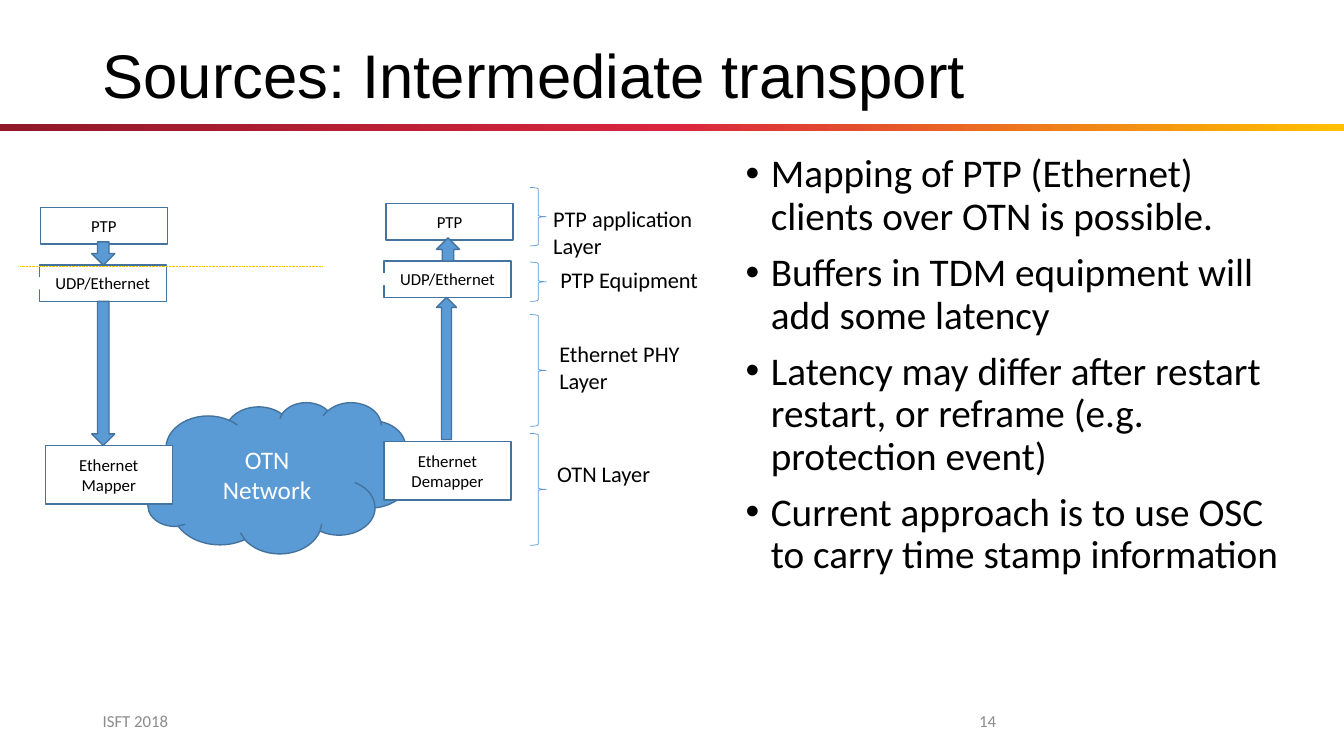
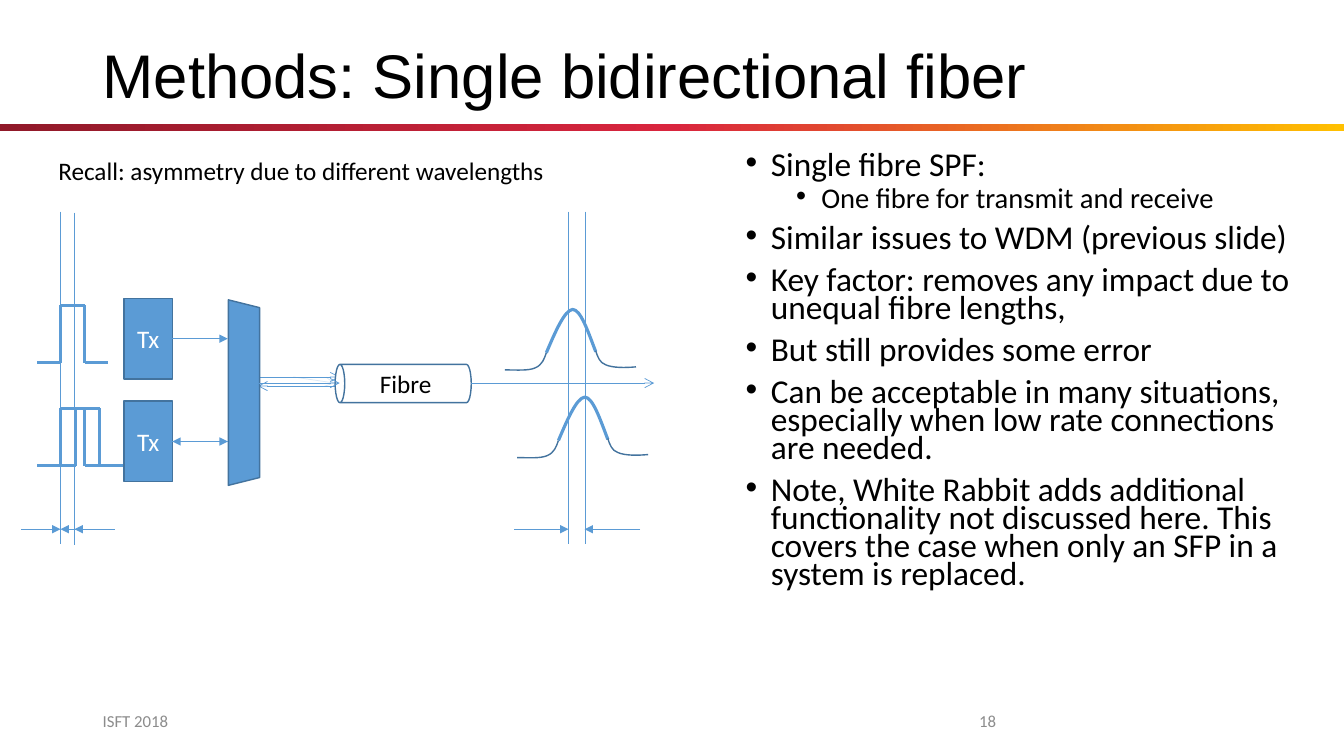
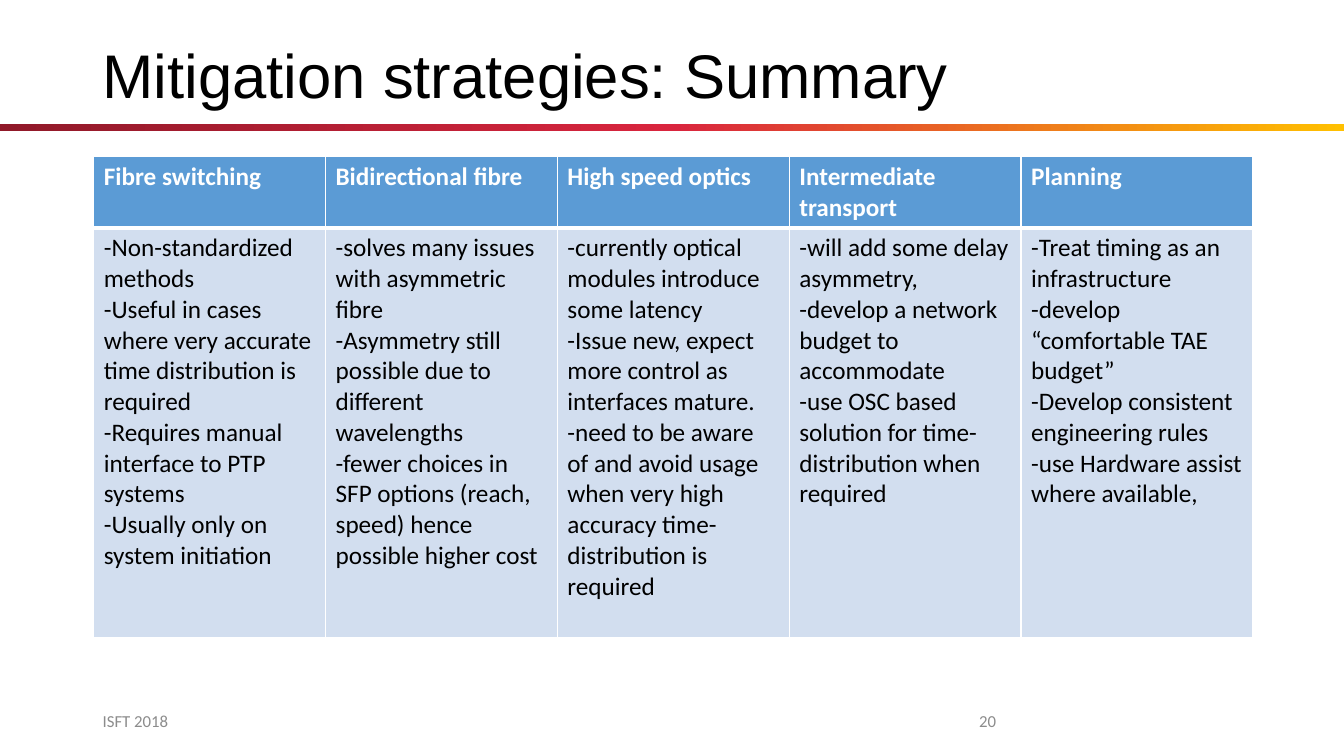
from dataclasses import dataclass
from itertools import pairwise
from typing import Optional

from lxml import etree
from pptx import Presentation
from pptx.dml.color import RGBColor
from pptx.enum.dml import MSO_LINE
from pptx.enum.shapes import MSO_CONNECTOR, MSO_SHAPE
from pptx.enum.text import MSO_ANCHOR, MSO_AUTO_SIZE, PP_ALIGN
from pptx.oxml import parse_xml
from pptx.oxml.ns import nsdecls, qn
from pptx.util import Inches, Pt

# Enum members
RECT, CLOUD, CAN = MSO_SHAPE.RECTANGLE, MSO_SHAPE.CLOUD, MSO_SHAPE.CAN
TRAPEZOID, BRACE = MSO_SHAPE.TRAPEZOID, MSO_SHAPE.RIGHT_BRACE
DOWN, UP = MSO_SHAPE.DOWN_ARROW, MSO_SHAPE.UP_ARROW
STRAIGHT, DOTTED = MSO_CONNECTOR.STRAIGHT, MSO_LINE.ROUND_DOT
LEFT, CENTER, RIGHT = PP_ALIGN.LEFT, PP_ALIGN.CENTER, PP_ALIGN.RIGHT
TOP, MIDDLE = MSO_ANCHOR.TOP, MSO_ANCHOR.MIDDLE
GROW = MSO_AUTO_SIZE.SHAPE_TO_FIT_TEXT

# Slide size, colours and fonts
SLIDE_H = 7.5
SLIDE_W = SLIDE_H * 16 / 9
BLACK = RGBColor(0x00, 0x00, 0x00)
WHITE = RGBColor(0xFF, 0xFF, 0xFF)
BLUE = RGBColor(0x5B, 0x9B, 0xD5)
EDGE = RGBColor(0x43, 0x73, 0x9E)
FAINT_BLUE = RGBColor(0x56, 0x98, 0xD3)
PALE_BLUE = RGBColor(0xD2, 0xDE, 0xEF)
GREY = RGBColor(0x8C, 0x8C, 0x8C)
GOLD = RGBColor(0xFF, 0xC0, 0x00)
RED = RGBColor(0xD9, 0x25, 0x3E)
DARK_RED = RGBColor(0x90, 0x19, 0x29)
TITLE_FONT, BODY_FONT = "Arial", "Calibri"


@dataclass
class Box:
    x: float
    y: float
    w: float
    h: float
    text: tuple = ()
    kind: MSO_SHAPE = RECT
    fill: Optional[RGBColor] = None
    line: Optional[RGBColor] = EDGE
    weight: float = 1
    size: float = 12
    color: RGBColor = BLACK
    rotation: float = 0


@dataclass
class Line:
    x1: float
    y1: float
    x2: float
    y2: float
    tail: str = ""
    weight: float = 0.5
    color: RGBColor = BLUE


@dataclass
class Bullet:
    text: str
    level: int = 0


# Text helpers
def add_run(p, text: str, size: float, color: RGBColor, font: str = BODY_FONT, bold: bool = False):
    r = p.add_run()
    r.text = text
    r.font.size = Pt(size)
    r.font.name = font
    r.font.bold = bold
    r.font.color.rgb = color


def write(tf, lines, size: float, color: RGBColor, align=LEFT, font: str = BODY_FONT,
          bold: bool = False, spacing: Optional[float] = None):
    for i, text in enumerate(lines):
        p = tf.add_paragraph() if i else tf.paragraphs[0]
        p.alignment = align
        if spacing:
            p.line_spacing = spacing
        add_run(p, text, size, color, font, bold)


def add_text(s, x: float, y: float, w: float, h: float, anchor=TOP):
    tf = s.shapes.add_textbox(Inches(x), Inches(y), Inches(w), Inches(h)).text_frame
    tf.word_wrap = True
    tf.vertical_anchor = anchor
    return tf


def add_label(s, x: float, y: float, w: float, h: float, lines, size: float):
    tf = add_text(s, x, y, w, h)
    tf.word_wrap = False
    tf.auto_size = GROW
    write(tf, lines, size, BLACK)


def add_bullets(s, bullets, sizes, spacing: float):
    tf = add_text(s, 7.3, 1.48, 5.67, 4.76)
    for i, b in enumerate(bullets):
        p = tf.add_paragraph() if i else tf.paragraphs[0]
        pPr = p._p.get_or_add_pPr()
        pPr.set("marL", str(Inches(0.25 + 0.5 * b.level)))
        pPr.set("indent", str(-Inches(0.25)))
        etree.SubElement(pPr, qn("a:buFont")).set("typeface", "Arial")
        etree.SubElement(pPr, qn("a:buChar")).set("char", "•")
        p.level = b.level
        p.line_spacing = spacing
        if i:
            p.space_before = Pt(5 if b.level else 10)
        add_run(p, b.text, sizes[b.level], BLACK)


# Shape helpers
def add_box(s, b: Box):
    sp = s.shapes.add_shape(b.kind, Inches(b.x), Inches(b.y), Inches(b.w), Inches(b.h))
    sp.shadow.inherit = False
    sp.rotation = b.rotation
    if b.fill is None:
        sp.fill.background()
    else:
        sp.fill.solid()
        sp.fill.fore_color.rgb = b.fill
    if b.line is None:
        sp.line.fill.background()
    else:
        sp.line.color.rgb = b.line
        sp.line.width = Pt(b.weight)
    if b.text:
        sp.text_frame.vertical_anchor = MIDDLE
        write(sp.text_frame, b.text, b.size, b.color, CENTER)
    return sp


def add_line(s, ln: Line):
    c = s.shapes.add_connector(STRAIGHT, Inches(ln.x1), Inches(ln.y1), Inches(ln.x2), Inches(ln.y2))
    c.line.color.rgb = ln.color
    c.line.width = Pt(ln.weight)
    if ln.tail:
        etree.SubElement(c.line._get_or_add_ln(), qn("a:tailEnd")).set("type", ln.tail)
    etree.SubElement(c._element.spPr, qn("a:effectLst"))
    return c


def add_curve(s, points, dx: float, dy: float, color: RGBColor, weight: float):
    """Draw joined cubic Bezier curves: a start, then three points for each curve."""
    start, *rest = [(Inches(x + dx), Inches(y + dy)) for x, y in points]
    fb = s.shapes.build_freeform(*start)
    fb.add_line_segments(rest, close=False)
    sp = fb.convert_to_shape()
    segments = list(sp._element.spPr.iter(qn("a:lnTo")))
    for i in range(0, len(segments), 3):
        curve = etree.Element(qn("a:cubicBezTo"))
        segments[i].addprevious(curve)
        for seg in segments[i:i + 3]:
            curve.append(seg[0])
            seg.getparent().remove(seg)
    sp.shadow.inherit = False
    sp.fill.background()
    sp.line.color.rgb = color
    sp.line.width = Pt(weight)


# Shared frame: title, gradient band, footer
def new_slide(prs, title: str, number: int):
    s = prs.slides.add_slide(prs.slide_layouts[6])
    band = add_box(s, Box(0, 1.23, SLIDE_W, 0.07, fill=RED, line=None))
    band.fill.gradient()
    band.fill.gradient_angle = 0
    stops = band._element.spPr.find(qn("a:gradFill")).find(qn("a:gsLst"))
    for old in list(stops):
        stops.remove(old)
    for pos, color in ((0, DARK_RED), (50, RED), (100, GOLD)):
        stops.append(parse_xml(
            f'<a:gs {nsdecls("a")} pos="{pos * 1000}"><a:srgbClr val="{color}"/></a:gs>'))
    write(add_text(s, 0.92, 0.16, 11.5, 1.23, MIDDLE), [title], 44, BLACK, font=TITLE_FONT, spacing=0.9)
    write(add_text(s, 0.92, 6.95, 3, 0.4, MIDDLE), ["ISFT 2018"], 12, GREY)
    write(add_text(s, 9.42, 6.95, 0.56, 0.4, MIDDLE), [str(number)], 12, GREY, RIGHT)
    return s


def transport_slide(prs):
    s = new_slide(prs, "Sources: Intermediate transport", 14)

    # Network cloud and the two protocol stacks
    add_box(s, Box(1.41, 3.99, 2.67, 1.5, ("OTN", "Network"), CLOUD, BLUE, size=18, color=WHITE))
    add_box(s, Box(0.39, 2.63, 1.26, 0.36, ("UDP/Ethernet",)))
    add_line(s, Line(0.2, 2.64, 3.2, 2.64, color=GOLD)).line.dash_style = DOTTED
    for b in (
        Box(0.29, 2.75, 0.16, 0.12, fill=WHITE, line=None),
        Box(0.4, 2.06, 1.26, 0.36, ("PTP",)),
        Box(0.91, 2.4, 0.23, 0.23, kind=DOWN, fill=BLUE),
        Box(0.45, 4.42, 1.26, 0.58, ("Ethernet", "Mapper"), fill=WHITE),
        Box(3.81, 4.38, 1.26, 0.58, ("Ethernet", "Demapper"), fill=WHITE),
        Box(0.91, 2.99, 0.23, 1.43, kind=DOWN, fill=BLUE),
        Box(3.81, 2.59, 1.26, 0.36, ("UDP/Ethernet",)),
        Box(3.71, 2.71, 0.16, 0.12, fill=WHITE, line=None),
        Box(3.83, 2.02, 1.26, 0.36, ("PTP",)),
        Box(4.33, 2.36, 0.23, 0.23, kind=UP, fill=BLUE),
        Box(4.33, 2.95, 0.2, 1.41, kind=UP, fill=BLUE),
    ):
        add_box(s, b)

    # Layer braces and their labels
    for y, h in ((1.86, 0.58), (2.6, 0.39), (3.12, 1.11), (4.3, 1.11)):
        add_box(s, Box(5.26, y, 0.16, h, kind=BRACE, line=BLUE, weight=0.5))
    for x, y, w, h, lines in (
        (5.39, 1.99, 1.6, 0.64, ("PTP application", "Layer")),
        (5.46, 2.59, 1.58, 0.37, ("PTP Equipment",)),
        (5.45, 3.33, 1.41, 0.64, ("Ethernet PHY", "Layer")),
        (5.43, 4.52, 1.14, 0.37, ("OTN Layer",)),
    ):
        add_label(s, x, y, w, h, lines, 16)

    add_bullets(s, (
        Bullet("Mapping of PTP (Ethernet) clients over OTN is possible."),
        Bullet("Buffers in TDM equipment will add some latency"),
        Bullet("Latency may differ after restart restart, or reframe (e.g. protection event)"),
        Bullet("Current approach is to use OSC to carry time stamp information"),
    ), (28,), 0.9)


def add_faint_arrow(s):
    c = add_line(s, Line(2.91, 3.74, 3.32, 3.8, "arrow", color=FAINT_BLUE))
    clr = next(c._element.spPr.iter(qn("a:srgbClr")))
    etree.SubElement(clr, qn("a:alpha")).set("val", "11000")


def add_square_pulse(s, x: float, base: float):
    top, right = base - 0.57, x + 0.24
    outline = ((x - 0.23, base), (x, base), (x, top), (right, top), (right, base), (right + 0.23, base))
    for a, b in pairwise(outline):
        add_line(s, Line(*a, *b, weight=2))


def add_smooth_pulse(s, dx: float, dy: float):
    peak = ((5.42, 3.5), (5.51, 3.29), (5.6, 3.08), (5.68, 3.07),
            (5.76, 3.07), (5.83, 3.28), (5.91, 3.49))
    left_tail = ((5.42, 3.5), (5.4, 3.56), (5.38, 3.62), (5.31, 3.65),
                 (5.24, 3.68), (5.13, 3.67), (5.01, 3.67))
    right_tail = ((5.91, 3.48), (5.93, 3.54), (5.95, 3.6), (6.01, 3.62),
                  (6.08, 3.65), (6.2, 3.65), (6.31, 3.64))
    add_curve(s, peak, dx, dy, BLUE, 2.25)
    for tail in (left_tail, right_tail):
        add_curve(s, tail, dx, dy, EDGE, 1)


def fiber_slide(prs):
    s = new_slide(prs, "Methods: Single bidirectional fiber", 18)
    add_bullets(s, (
        Bullet("Single fibre SPF:"),
        Bullet("One fibre for transmit and receive", 1),
        Bullet("Similar issues to WDM (previous slide)"),
        Bullet("Key factor: removes any impact due to unequal fibre lengths,"),
        Bullet("But still provides some error"),
        Bullet("Can be acceptable in many situations, especially when low rate connections are needed."),
        Bullet("Note, White Rabbit adds additional functionality not discussed here. "
               "This covers the case when only an SFP in a system is replaced."),
    ), (23.8, 20.4), 0.7)

    # Light paths that run behind the fibre
    add_faint_arrow(s)
    add_line(s, Line(2.57, 3.74, 3.37, 3.74, "arrow"))
    add_line(s, Line(3.36, 3.83, 2.56, 3.83, "arrow"))

    # Transmitters, multiplexer and fibre
    upper, lower = (
        add_box(s, Box(1.23, y, 0.48, 0.8, ("Tx",), fill=BLUE, size=18, color=WHITE))
        for y in (2.96, 3.98))
    add_box(s, Box(1.5, 3.74, 1.84, 0.31, kind=TRAPEZOID, fill=BLUE, rotation=90))
    fibre = add_box(s, Box(3.81, 3.13, 0.38, 1.35, ("Fibre",), CAN, WHITE, size=18, rotation=270))
    fibre.text_frame._txBody.bodyPr.set("vert", "vert")

    # Links
    add_line(s, Line(1.71, 3.36, 2.26, 3.36, "triangle")).begin_connect(upper, 3)
    add_line(s, Line(1.71, 4.38, 2.26, 4.38, "triangle")).begin_connect(lower, 3)
    add_line(s, Line(2.26, 4.38, 1.71, 4.38, "triangle")).end_connect(lower, 3)
    add_faint_arrow(s)
    add_line(s, Line(4.67, 3.8, 6.49, 3.8, "arrow"))
    add_line(s, Line(2.57, 3.8, 3.37, 3.8, "arrow"))

    # Pulses
    for x, base in ((0.75, 4.62), (0.6, 3.6), (0.6, 4.62)):
        add_square_pulse(s, x, base)
    for dx, dy in ((0, 0), (0.12, 0.87)):
        add_smooth_pulse(s, dx, dy)

    # Time markers and the arrows between them
    for x, y in ((0.6, 2.1), (0.74, 2.11), (5.64, 2.1), (5.81, 2.1)):
        add_line(s, Line(x, y, x, y + 3.3))
    for x1, x2 in ((0.21, 0.6), (1, 0.6), (1.14, 0.74), (5.1, 5.64), (6.35, 5.8)):
        add_line(s, Line(x1, 5.25, x2, 5.25, "triangle"))

    add_label(s, 0.48, 1.49, 5.08, 0.4, ["Recall: asymmetry due to different wavelengths"], 18)


def style_cell(cell, fill: RGBColor, top: float, bottom: float):
    cell.fill.solid()
    cell.fill.fore_color.rgb = fill
    tcPr = cell._tc.get_or_add_tcPr()
    for i, (side, weight) in enumerate((("L", 1), ("R", 1), ("T", top), ("B", bottom))):
        tcPr.insert(i, parse_xml(
            f'<a:ln{side} {nsdecls("a")} w="{Pt(weight)}"><a:solidFill>'
            f'<a:srgbClr val="{WHITE}"/></a:solidFill></a:ln{side}>'))


def summary_slide(prs):
    s = new_slide(prs, "Mitigation strategies: Summary", 20)
    strategies = {
        "Fibre switching": (
            "-Non-standardized methods",
            "-Useful in cases where very accurate time distribution is required",
            "-Requires manual interface to PTP systems",
            "-Usually only on system initiation"),
        "Bidirectional fibre": (
            "-solves many issues with asymmetric fibre",
            "-Asymmetry still possible due to different wavelengths",
            "-fewer choices in SFP options (reach, speed) hence possible higher cost"),
        "High speed optics": (
            "-currently optical modules introduce some latency",
            "-Issue new, expect more control as interfaces mature.",
            "-need to be aware of and avoid usage when very high accuracy time-distribution is required"),
        "Intermediate transport": (
            "-will add some delay asymmetry,",
            "-develop a network budget to accommodate",
            "-use OSC based solution for time-distribution when required"),
        "Planning": (
            "-Treat timing as an infrastructure",
            "-develop “comfortable TAE budget”",
            "-Develop consistent engineering rules",
            "-use Hardware assist where available,"),
    }
    table = s.shapes.add_table(2, len(strategies), Inches(0.93), Inches(1.55),
                               Inches(11.5), Inches(4.78)).table
    table.horz_banding = False
    table.rows[0].height = Inches(0.71)
    table.rows[1].height = Inches(4.07)
    for col, (heading, points) in enumerate(strategies.items()):
        table.columns[col].width = Inches(2.3)
        head, body = table.cell(0, col), table.cell(1, col)
        style_cell(head, BLUE, 1, 3)
        write(head.text_frame, [heading], 18, WHITE, bold=True)
        style_cell(body, PALE_BLUE, 3, 1)
        write(body.text_frame, points, 18, BLACK)


def main():
    prs = Presentation()
    prs.slide_width, prs.slide_height = Inches(SLIDE_W), Inches(SLIDE_H)
    transport_slide(prs)
    fiber_slide(prs)
    summary_slide(prs)
    prs.save("out.pptx")


if __name__ == "__main__":
    main()
